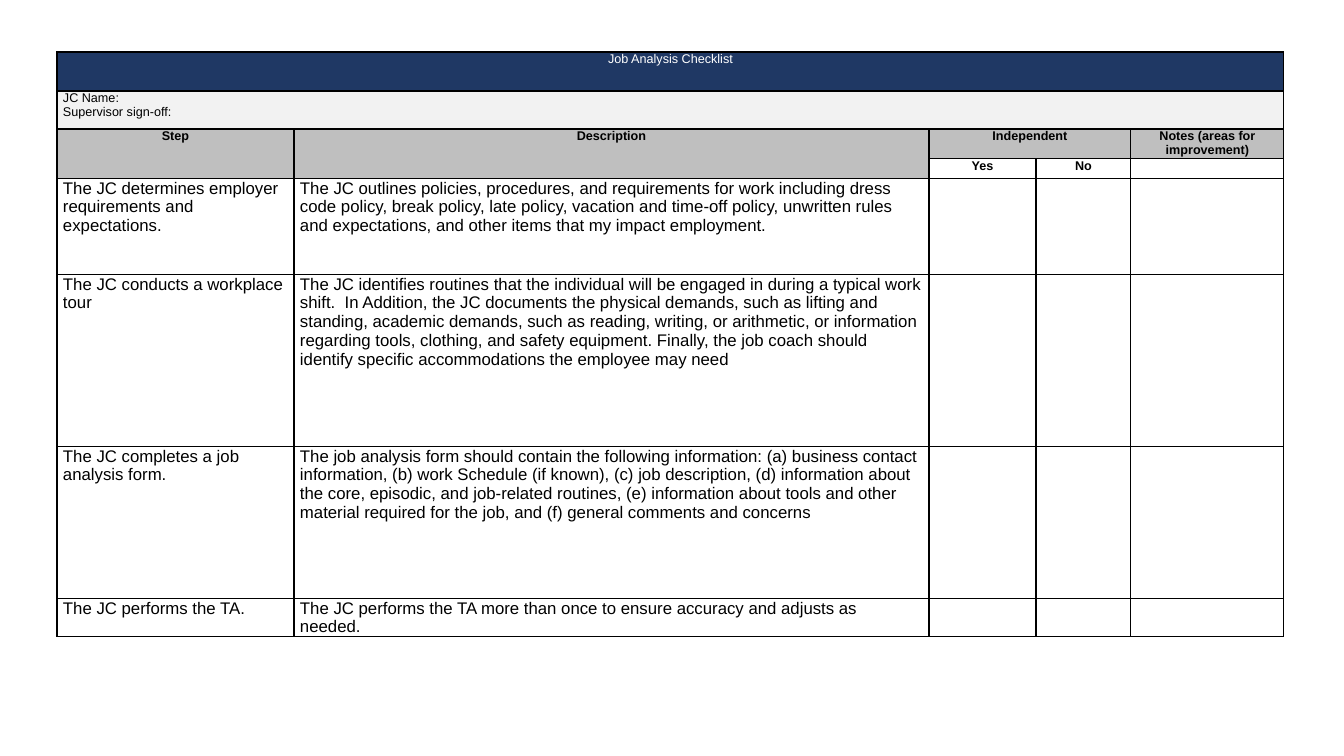
from dataclasses import dataclass

from lxml import etree
from pptx import Presentation
from pptx.dml.color import RGBColor
from pptx.enum.text import PP_ALIGN
from pptx.oxml.ns import qn
from pptx.table import Table, _Cell
from pptx.util import Emu, Pt

LEFT, CENTER = PP_ALIGN.LEFT, PP_ALIGN.CENTER
EMU_PER_PX = 914400 / 100.8
FONT = "Arial"
BLACK, WHITE = "000000", "FFFFFF"
NAVY, PALE, GREY = "1F3864", "F2F2F2", "BFBFBF"

TABLE_LEFT, TABLE_TOP = 57, 52
COL_WIDTHS = [237, 635, 107, 95, 153]
ROW_HEIGHTS = [39, 38, 30, 20, 96, 172, 152, 38]
FIRST_STEP_ROW = 4


@dataclass
class CellStyle:
    size: int = 12
    bold: bool = False
    color: str = BLACK
    fill: str = WHITE
    align: PP_ALIGN = LEFT


TITLE = CellStyle(size=9, color=WHITE, fill=NAVY, align=CENTER)
SIGN_OFF = CellStyle(size=9, fill=PALE)
HEADER = CellStyle(size=9, bold=True, fill=GREY, align=CENTER)
SUBHEADER = CellStyle(size=9, bold=True, align=CENTER)
BODY = CellStyle()


@dataclass
class Entry:
    row: int
    col: int
    text: str
    style: CellStyle
    row_span: int = 1
    col_span: int = 1


HEADINGS = [
    Entry(0, 0, "Job Analysis Checklist", TITLE, col_span=5),
    Entry(1, 0, "JC Name:\nSupervisor sign-off:", SIGN_OFF, col_span=5),
    Entry(2, 0, "Step", HEADER, row_span=2),
    Entry(2, 1, "Description", HEADER, row_span=2),
    Entry(2, 2, "Independent", HEADER, col_span=2),
    Entry(2, 4, "Notes (areas for improvement)", HEADER),
    Entry(3, 2, "Yes", SUBHEADER),
    Entry(3, 3, "No", SUBHEADER),
    Entry(3, 4, "", SUBHEADER),
]

STEPS = [
    ("The JC determines employer requirements and expectations.",
     "The JC outlines policies, procedures, and requirements for work including dress "
     "code policy, break policy, late policy, vacation and time-off policy, unwritten "
     "rules and expectations, and other items that my impact employment."),
    ("The JC conducts a workplace tour",
     "The JC identifies routines that the individual will be engaged in during a typical "
     "work shift.  In Addition, the JC documents the physical demands, such as lifting and "
     "standing, academic demands, such as reading, writing, or arithmetic, or information "
     "regarding tools, clothing, and safety equipment. Finally, the job coach should "
     "identify specific accommodations the employee may need"),
    ("The JC completes a job analysis form.",
     "The job analysis form should contain the following information: (a) business contact "
     "information, (b) work Schedule (if known), (c) job description, (d) information about "
     "the core, episodic, and job-related routines, (e) information about tools and other "
     "material required for the job, and (f) general comments and concerns"),
    ("The JC performs the TA.",
     "The JC performs the TA more than once to ensure accuracy and adjusts as needed."),
]


def px(n: int) -> Emu:
    return Emu(round(n * EMU_PER_PX))


def rgb(value: str) -> RGBColor:
    return RGBColor.from_string(value)


def add_borders(cell: _Cell) -> None:
    tc_pr = cell._tc.get_or_add_tcPr()
    for i, side in enumerate(("lnL", "lnR", "lnT", "lnB")):
        ln = etree.Element(qn(f"a:{side}"), w=str(Pt(1)))
        fill = etree.SubElement(ln, qn("a:solidFill"))
        etree.SubElement(fill, qn("a:srgbClr"), val=BLACK)
        tc_pr.insert(i, ln)  # borders come before the fill


def format_cell(cell: _Cell, style: CellStyle) -> None:
    cell.margin_left = cell.margin_right = px(6)
    cell.margin_top = cell.margin_bottom = 0
    cell.fill.solid()
    cell.fill.fore_color.rgb = rgb(style.fill)
    add_borders(cell)


def write_cell(cell: _Cell, text: str, style: CellStyle) -> None:
    tf = cell.text_frame
    for i, line in enumerate(text.split("\n")):
        p = tf.add_paragraph() if i else tf.paragraphs[0]
        p.alignment = style.align
        if not line:
            # an empty cell keeps its row low only with a small end mark
            etree.SubElement(p._p, qn("a:endParaRPr"), sz=str(style.size * 100))
            continue
        r = p.add_run()
        r.text = line
        r.font.name = FONT
        r.font.size = Pt(style.size)
        r.font.bold = style.bold
        r.font.color.rgb = rgb(style.color)


def fill_entry(table: Table, entry: Entry) -> None:
    rows = range(entry.row, entry.row + entry.row_span)
    cols = range(entry.col, entry.col + entry.col_span)
    for row in rows:
        for col in cols:
            format_cell(table.cell(row, col), entry.style)
    cell = table.cell(entry.row, entry.col)
    if len(rows) * len(cols) > 1:
        cell.merge(table.cell(rows[-1], cols[-1]))
    write_cell(cell, entry.text, entry.style)


def main() -> None:
    prs = Presentation()
    prs.slide_width, prs.slide_height = px(1344), px(756)
    slide = prs.slides.add_slide(prs.slide_layouts[6])
    table = slide.shapes.add_table(
        len(ROW_HEIGHTS), len(COL_WIDTHS), px(TABLE_LEFT), px(TABLE_TOP),
        px(sum(COL_WIDTHS)), px(sum(ROW_HEIGHTS))).table
    table.first_row = table.horz_banding = False
    for column, width in zip(table.columns, COL_WIDTHS):
        column.width = px(width)
    for row, height in zip(table.rows, ROW_HEIGHTS):
        row.height = px(height)

    step_entries = [
        Entry(row, col, text, BODY)
        for row, step in enumerate(STEPS, FIRST_STEP_ROW)
        for col, text in enumerate((*step, "", "", ""))
    ]
    for entry in HEADINGS + step_entries:
        fill_entry(table, entry)
    prs.save("out.pptx")


if __name__ == "__main__":
    main()
